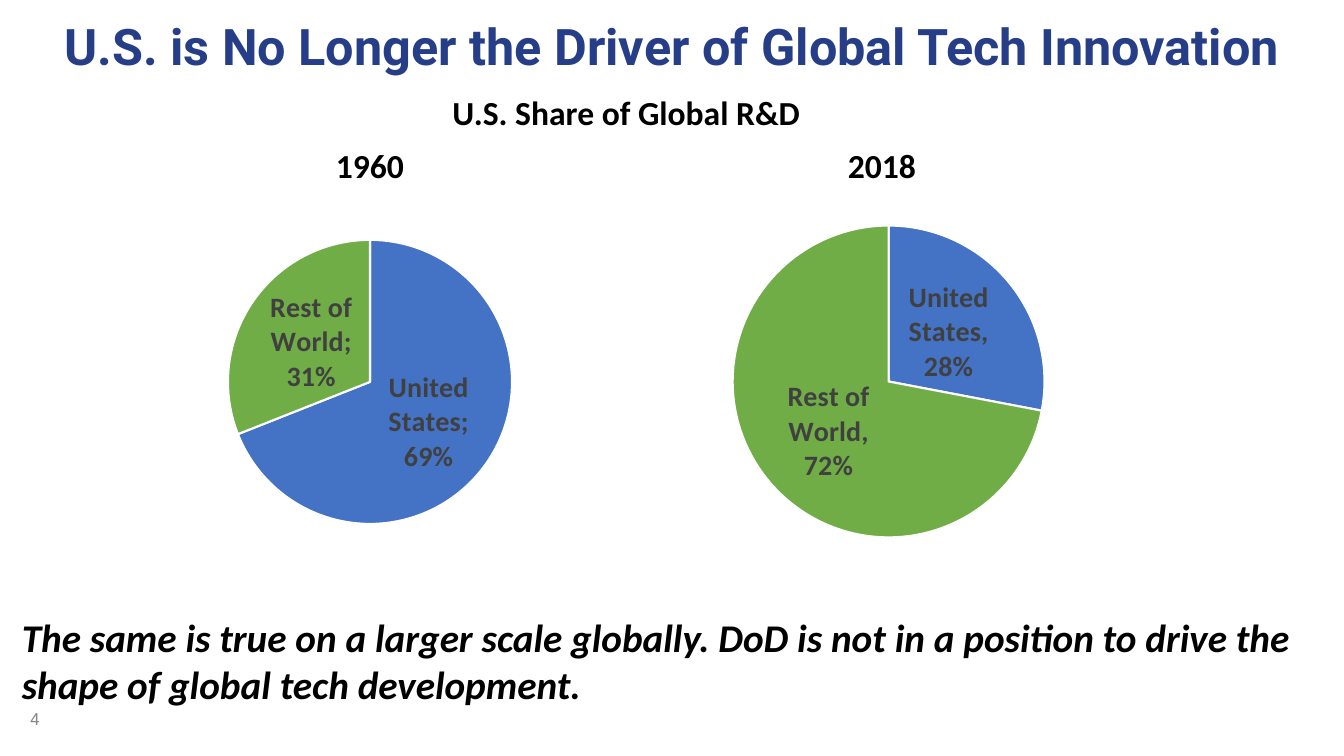
from dataclasses import dataclass

from lxml import etree
from pptx import Presentation
from pptx.chart.data import CategoryChartData
from pptx.dml.color import RGBColor
from pptx.enum.chart import XL_CHART_TYPE as ChartType, XL_LABEL_POSITION as LabelPosition
from pptx.enum.text import MSO_ANCHOR as Anchor, PP_ALIGN as Align
from pptx.oxml.ns import qn
from pptx.util import Cm, Pt


@dataclass(frozen=True)
class Theme:
    title_font: str = "Roboto"
    body_font: str = "Calibri"
    title_color: str = "263D87"
    text_color: str = "000000"
    label_color: str = "404040"
    number_color: str = "888A8C"
    border_color: str = "FFFFFF"
    slice_colors: tuple = ("4472C4", "70AD47")
    title_size: int = 36
    statement_size: int = 28
    heading_size: int = 24
    label_size: int = 20
    number_size: int = 12


class SlideBuilder:
    def __init__(self, presentation, theme):
        self.theme = theme
        self.slide = presentation.slides.add_slide(presentation.slide_layouts[5])

    def style_font(self, font, size, color, name=None, bold=True, italic=False):
        font.name = name or self.theme.body_font
        font.size = Pt(size)
        font.bold = bold
        font.italic = italic
        font.color.rgb = RGBColor.from_string(color)

    def title(self, text, width, height):
        shape = self.slide.shapes.title
        shape.left, shape.top, shape.width, shape.height = 0, 0, Cm(width), Cm(height)
        frame = shape.text_frame
        frame.text = text
        frame.word_wrap = True
        frame.vertical_anchor = Anchor.MIDDLE
        paragraph = frame.paragraphs[0]
        paragraph.alignment = Align.CENTER
        paragraph.line_spacing = 0.9
        self.style_font(paragraph.runs[0].font, self.theme.title_size,
                        self.theme.title_color, self.theme.title_font)

    def text(self, text, left, top, width, height, size, color=None,
             align=Align.LEFT, anchor=Anchor.TOP, **font_style):
        box = self.slide.shapes.add_textbox(Cm(left), Cm(top), Cm(width), Cm(height))
        frame = box.text_frame
        frame.text = text
        frame.word_wrap = True
        frame.vertical_anchor = anchor
        paragraph = frame.paragraphs[0]
        paragraph.alignment = align
        self.style_font(paragraph.runs[0].font, size,
                        color or self.theme.text_color, **font_style)

    def pie(self, shares, left, top, width, height, diameter, separator, as_percent):
        """Add a centred pie; as_percent labels computed shares instead of values."""
        data = CategoryChartData(number_format="General" if as_percent else "0%")
        data.categories = ["United States", "Rest of World"]
        data.add_series("Series 1", shares)
        chart = self.slide.shapes.add_chart(
            ChartType.PIE, Cm(left), Cm(top), Cm(width), Cm(height), data).chart
        chart.has_title = False
        chart.has_legend = False
        self.style_font(chart.font, self.theme.label_size, self.theme.text_color)
        chart.plots[0].vary_by_categories = True
        series = chart.plots[0].series[0]
        for index, color in enumerate(self.theme.slice_colors):
            slice_format = series.points[index].format
            slice_format.fill.solid()
            slice_format.fill.fore_color.rgb = RGBColor.from_string(color)
            slice_format.line.color.rgb = RGBColor.from_string(self.theme.border_color)
            slice_format.line.width = Pt(1.5)

        labels = series.data_labels
        labels.show_category_name = True
        labels.show_value = not as_percent
        labels.show_percentage = as_percent
        labels.show_legend_key = False
        labels.number_format = "0%"
        labels.number_format_is_linked = False
        labels.position = LabelPosition.CENTER
        self.style_font(labels.font, self.theme.label_size, self.theme.label_color)
        self.set_separator(chart, separator)
        self.center_plot(chart, diameter / width, diameter / height)

    def set_separator(self, chart, separator):
        flag = chart.element.xpath(".//c:ser/c:dLbls/c:showPercent")[0]
        bubble = flag.getparent().find(qn("c:showBubbleSize"))
        element = etree.Element(qn("c:separator"))
        element.text = separator
        (flag if bubble is None else bubble).addnext(element)

    def center_plot(self, chart, width_share, height_share):
        plot_area = chart.element.xpath(".//c:plotArea")[0]
        for old_layout in plot_area.findall(qn("c:layout")):
            plot_area.remove(old_layout)
        layout = etree.Element(qn("c:layout"))
        plot_area.insert(0, layout)
        manual = etree.SubElement(layout, qn("c:manualLayout"))
        settings = {
            "layoutTarget": "inner", "xMode": "edge", "yMode": "edge",
            "x": (1 - width_share) / 2, "y": (1 - height_share) / 2,
            "w": width_share, "h": height_share,
        }
        for name, value in settings.items():
            etree.SubElement(manual, qn(f"c:{name}")).set("val", str(value))


def main():
    theme = Theme()
    presentation = Presentation()
    presentation.slide_width, presentation.slide_height = Cm(33.87), Cm(19.05)
    builder = SlideBuilder(presentation, theme)

    builder.title("U.S. is No Longer the Driver of Global Tech Innovation", 33.87, 2.49)
    builder.text("4", 0.51, 17.6, 7.62, 1.02, theme.number_size, theme.number_color,
                 anchor=Anchor.MIDDLE, name=theme.title_font, bold=False)
    builder.text("U.S. Share of Global R&D", 11.15, 2.18, 10.01, 1.27, theme.heading_size)
    builder.text("The same is true on a larger scale globally. DoD is not in a position "
                 "to drive the shape of global tech development.",
                 0.3, 15.32, 33.55, 2.64, theme.statement_size, italic=True)

    builder.pie((0.69, 0.31), 3.61, 4.01, 11.43, 11.23, 7.16, "; ", as_percent=False)
    builder.pie((28, 72), 16.26, 4.6, 12.27, 10.03, 7.86, ", ", as_percent=True)
    for year, left in (("1960", 7.37), ("2018", 20.27)):
        builder.text(year, left, 3.53, 3.91, 1.27, theme.heading_size, align=Align.CENTER)

    presentation.save("out.pptx")


if __name__ == "__main__":
    main()
